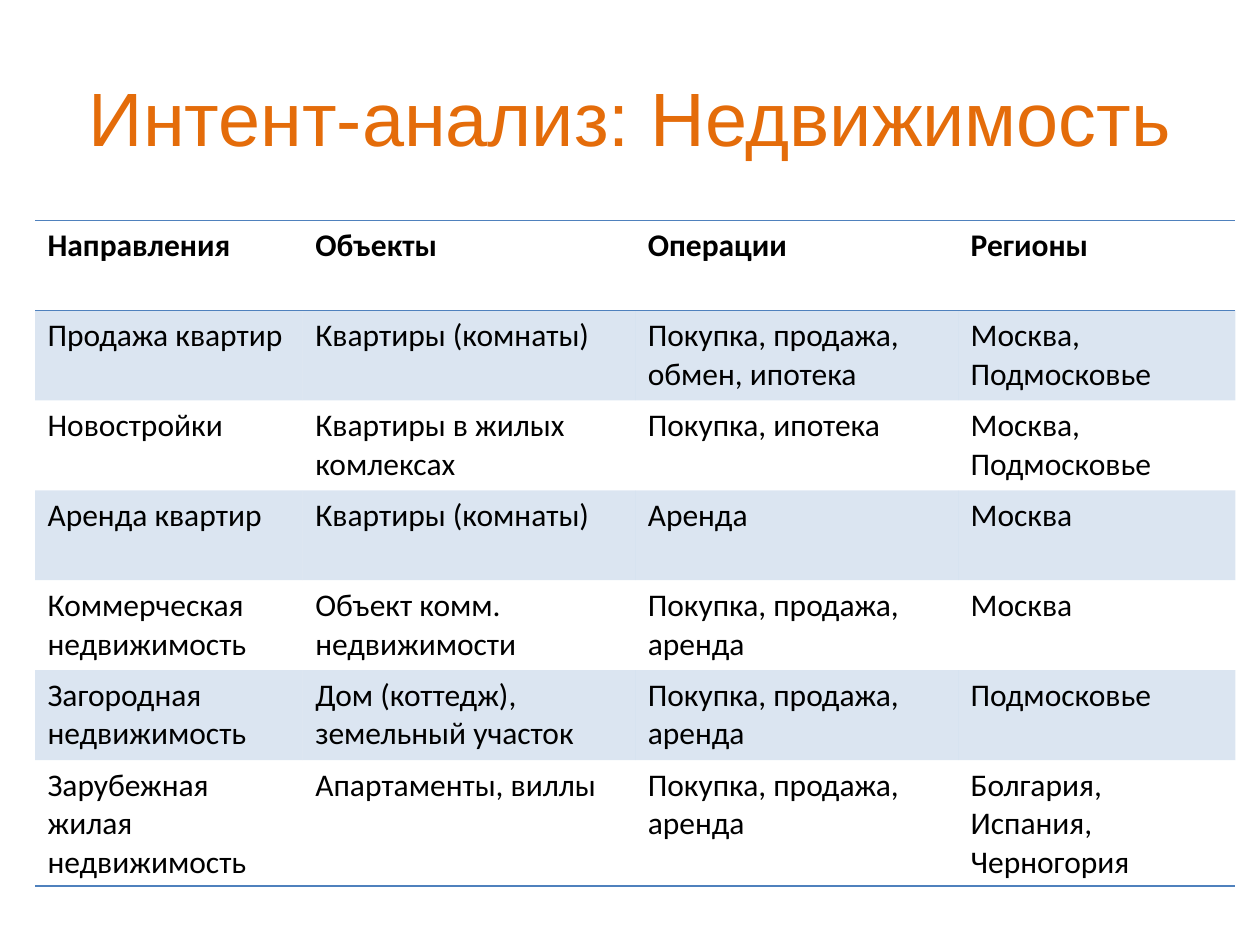
"""Build a slide with a real-estate intent analysis table."""
from lxml.etree import SubElement
from pptx import Presentation
from pptx.dml.color import RGBColor
from pptx.enum.text import MSO_ANCHOR, PP_ALIGN
from pptx.oxml.ns import qn
from pptx.util import Pt

TITLE = "Интент-анализ: Недвижимость"
ROWS = [
    ("Направления", "Объекты", "Операции", "Регионы"),
    ("Продажа квартир", "Квартиры (комнаты)", "Покупка, продажа, обмен, ипотека", "Москва, Подмосковье"),
    ("Новостройки", "Квартиры в жилых комлексах", "Покупка, ипотека", "Москва, Подмосковье"),
    ("Аренда квартир", "Квартиры (комнаты)", "Аренда", "Москва"),
    ("Коммерческая недвижимость", "Объект комм. недвижимости", "Покупка, продажа, аренда", "Москва"),
    ("Загородная недвижимость", "Дом (коттедж), земельный участок", "Покупка, продажа, аренда", "Подмосковье"),
    ("Зарубежная жилая недвижимость", "Апартаменты, виллы", "Покупка, продажа, аренда", "Болгария, Испания, Черногория"),
]
COLORS = {"title": "E46C0A", "text": "000000", "accent": "4F81BD"}
COL_WIDTHS = [153, 190, 184.5, 158.5]
ROW_HEIGHT = 51.4
NO_STYLE = "{2D5ABB26-0587-4C30-8999-92F81FD0307C}"


def write(tf, text, font="Calibri", size=18, color="text", bold=False, align=PP_ALIGN.LEFT):
    tf.word_wrap = True
    p = tf.paragraphs[0]
    p.alignment = align
    r = p.add_run()
    r.text = text
    r.font.name = font
    r.font.size = Pt(size)
    r.font.bold = bold
    r.font.color.rgb = RGBColor.from_string(COLORS[color])


def add_border(cell, side):
    ln = SubElement(cell._tc.get_or_add_tcPr(), qn(f"a:ln{side}"), w=str(Pt(1)))
    fill = SubElement(ln, qn("a:solidFill"))
    SubElement(fill, qn("a:srgbClr"), val=COLORS["accent"])


def fill_band(cell):
    cell.fill.solid()
    cell.fill.fore_color.rgb = RGBColor.from_string(COLORS["accent"])
    clr = cell._tc.tcPr.find(qn("a:solidFill")).find(qn("a:srgbClr"))
    SubElement(clr, qn("a:alpha"), val="20000")


def add_table(s):
    sp = s.shapes.add_table(len(ROWS), len(COL_WIDTHS), Pt(20), Pt(126),
                            Pt(sum(COL_WIDTHS)), Pt(ROW_HEIGHT * len(ROWS)))
    table = sp.table
    table._tbl.tblPr.find(qn("a:tableStyleId")).text = NO_STYLE
    for col, width in zip(table.columns, COL_WIDTHS):
        col.width = Pt(width)
    for i, row in enumerate(ROWS):
        table.rows[i].height = Pt(ROW_HEIGHT)
        sides = {0: "TB", len(ROWS) - 1: "B"}.get(i, "")
        for j, text in enumerate(row):
            cell = table.cell(i, j)
            write(cell.text_frame, text, bold=i == 0)
            for side in sides:
                add_border(cell, side)
            if i % 2:
                fill_band(cell)
            else:
                cell.fill.background()


def main():
    prs = Presentation()
    prs.slide_width, prs.slide_height = Pt(720), Pt(540)
    s = prs.slides.add_slide(prs.slide_layouts[6])
    sp = s.shapes.add_textbox(Pt(36), Pt(21.6), Pt(648), Pt(90))
    sp.text_frame.vertical_anchor = MSO_ANCHOR.MIDDLE
    write(sp.text_frame, TITLE, font="Arial", size=43.2, color="title", align=PP_ALIGN.CENTER)
    add_table(s)
    prs.save("out.pptx")


if __name__ == "__main__":
    main()
